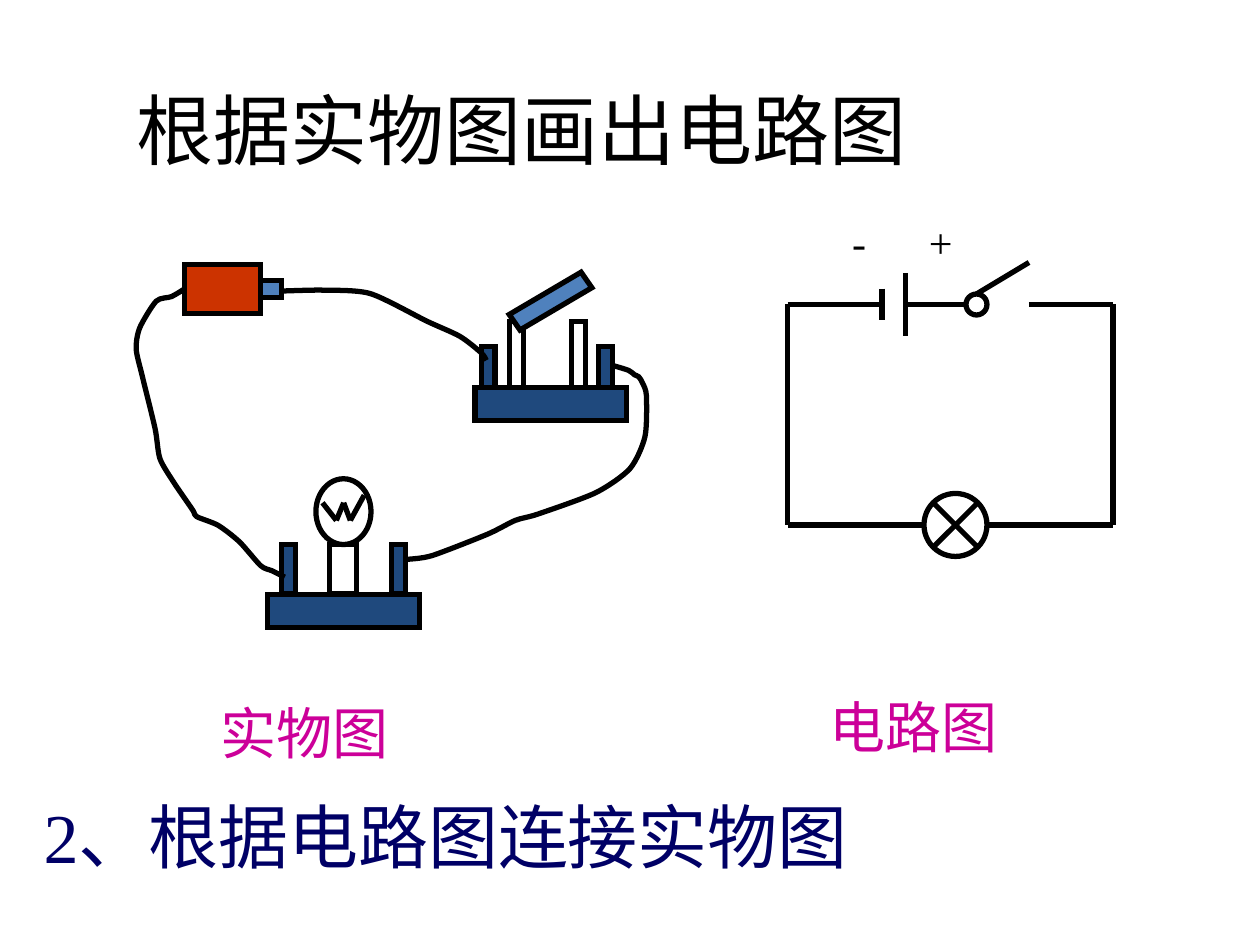
"""Build a slide that pairs a pictured circuit with its circuit diagram."""
from lxml.etree import SubElement
from pptx import Presentation
from pptx.dml.color import RGBColor
from pptx.enum.shapes import MSO_CONNECTOR as Link, MSO_SHAPE as Form
from pptx.enum.text import MSO_AUTO_SIZE as Fit, PP_ALIGN as Align
from pptx.oxml.ns import qn
from pptx.util import Pt

BLACK = RGBColor(0x00, 0x00, 0x00)
WHITE = RGBColor(0xFF, 0xFF, 0xFF)
RED = RGBColor(0xCC, 0x33, 0x00)
BLUE = RGBColor(0x4F, 0x81, 0xBD)
NAVY = RGBColor(0x1F, 0x49, 0x7D)
MAGENTA = RGBColor(0xCC, 0x00, 0x99)
INDIGO = RGBColor(0x00, 0x00, 0x66)

deck = Presentation()
deck.slide_width, deck.slide_height = Pt(720), Pt(540)
page = deck.slides.add_slide(deck.slide_layouts[6])


def add_part(form, fill, left, top, width, height):
    part = page.shapes.add_shape(form, Pt(left), Pt(top), Pt(width), Pt(height))
    part.shadow.inherit = False
    part.fill.solid()
    part.fill.fore_color.rgb = fill
    part.line.color.rgb = BLACK
    part.line.width = Pt(3)
    SubElement(part.line._get_or_add_ln(), qn("a:miter"), lim="800000")
    return part


def add_lines(ends):
    for x1, y1, x2, y2 in ends:
        line = page.shapes.add_connector(Link.STRAIGHT, Pt(x1), Pt(y1), Pt(x2), Pt(y2))
        line.line.color.rgb = BLACK
        line.line.width = Pt(3)
        SubElement(line._element.spPr, qn("a:effectLst"))


parts = [
    (Form.RECTANGLE, RED, 105.4, 151, 43.5, 28),
    (Form.RECTANGLE, BLUE, 149, 160.5, 11.7, 9.4),
    (Form.RECTANGLE, NAVY, 271.4, 221.5, 86.8, 18.7),
    (Form.RECTANGLE, WHITE, 291.2, 183.6, 7.9, 37.9),
    (Form.RECTANGLE, WHITE, 326.6, 183.6, 7.9, 37.9),
    (Form.RECTANGLE, NAVY, 275, 198, 7.9, 23.5),
    (Form.RECTANGLE, NAVY, 342, 198, 7.9, 23.5),
    (Form.RECTANGLE, NAVY, 152.9, 339.5, 86.7, 18.9),
    (Form.RECTANGLE, NAVY, 160.9, 311.2, 7.9, 28.3),
    (Form.RECTANGLE, NAVY, 223.9, 311.2, 7.9, 28.3),
    (Form.RECTANGLE, WHITE, 188.4, 311.2, 15.6, 28.3),
    (Form.OVAL, WHITE, 180.5, 273.6, 31.5, 37.6),
]
for part_values in parts:
    add_part(*part_values)

blade = add_part(Form.PARALLELOGRAM, BLUE, 307.4, 148.3, 14.4, 47.5)
blade.adjustments[0] = 0.25
blade.rotation = 235.2

filament = [(184.3, 287.3), (192.2, 297.4), (196.4, 287.3), (200.2, 297.4), (208.1, 283)]
add_lines([(*begin, *end) for begin, end in zip(filament, filament[1:])])

switch_to_lamp = [
    (349.9, 208.8), (359.3, 211.7), (362.6, 214.2), (365, 215.3), (367.2, 218.9),
    (369.4, 226.1), (368.6, 249.5), (360, 267.8), (340.6, 281.5), (307.4, 293.8),
    (294.5, 297.4), (278.6, 305.3), (247, 317.5), (232.6, 319.7)]
battery_to_lamp = [
    (105.8, 164.9), (98, 169.5), (89.3, 172.1), (79.9, 187.2), (77.8, 199.4),
    (81.4, 215.3), (88.6, 244.8), (91.4, 262.1), (99.4, 275.8), (110.2, 291.6),
    (112.3, 295.2), (124.6, 300.2), (136.8, 309.6), (149, 323.3), (155.5, 326.2),
    (162.7, 329.8)]
battery_to_switch = [
    (161.3, 166.3), (185, 165.8), (211.7, 167.8), (244.1, 183.6), (262.8, 192.2),
    (275, 201.6), (277.9, 205.9)]
for points in (switch_to_lamp, battery_to_lamp, battery_to_switch):
    nodes = [(Pt(x), Pt(y)) for x, y in points]
    builder = page.shapes.build_freeform(*nodes[0])
    builder.add_line_segments(nodes[1:], close=False)
    wire = builder.convert_to_shape()
    wire.shadow.inherit = False
    wire.fill.background()
    wire.line.color.rgb = BLACK
    wire.line.width = Pt(3)
    outline = wire._element.find(".//" + qn("a:path"))
    local = [(int(node.get("x")), int(node.get("y"))) for node in outline.iter(qn("a:pt"))]
    padded = [local[0], *local, local[-1]]
    for segment in outline.findall(qn("a:lnTo")):
        outline.remove(segment)
    for before, begin, end, after in zip(padded, padded[1:], padded[2:], padded[3:]):
        leave = [b + (e - p) / 8 for p, b, e in zip(before, begin, end)]
        arrive = [e - (a - b) / 8 for b, e, a in zip(begin, end, after)]
        curve = SubElement(outline, qn("a:cubicBezTo"))
        for x, y in (leave, arrive, end):
            SubElement(curve, qn("a:pt"), x=str(round(x)), y=str(round(y)))

LEFT, RIGHT, TOP, BOTTOM = 450, 636, 174, 300
add_part(Form.OVAL, WHITE, 552, 168, 12, 12)
add_part(Form.OVAL, WHITE, 528, 282, 36, 36)
add_lines([
    (504, 165, 504, 183),
    (517.5, 156, 517.5, 192),
    (LEFT, TOP, 504, TOP),
    (517.5, TOP, 552, TOP),
    (558, 168, 588, 150),
    (588, TOP, RIGHT, TOP),
    (LEFT, TOP, LEFT, BOTTOM),
    (RIGHT, TOP, RIGHT, BOTTOM),
    (558, 288, 534, 312),
    (534, 288, 558, 312),
    (LEFT, BOTTOM, 528, BOTTOM),
    (564, BOTTOM, RIGHT, BOTTOM),
])

labels = [
    ("根据实物图画出电路图", 71, 43.4, 493, 60, 44, BLACK, Align.LEFT),
    ("-", 476, 120, 30, 36, 24, BLACK, Align.CENTER),
    ("+", 522.6, 120, 30, 36, 24, BLACK, Align.CENTER),
    ("实物图", 118.8, 395.6, 115, 45.4, 32, MAGENTA, Align.LEFT),
    ("电路图", 467, 392.4, 127.4, 45.4, 32, MAGENTA, Align.LEFT),
    ("2、根据电路图连接实物图", 17.8, 450, 690, 55.4, 40, INDIGO, Align.LEFT),
]
for text, left, top, width, height, size, colour, align in labels:
    box = page.shapes.add_textbox(Pt(left), Pt(top), Pt(width), Pt(height))
    box.text_frame.word_wrap = True
    box.text_frame.auto_size = Fit.SHAPE_TO_FIT_TEXT
    para = box.text_frame.paragraphs[0]
    para.alignment = align
    span = para.add_run()
    span.text = text
    for attribute, value in {"name": "Times New Roman", "size": Pt(size)}.items():
        setattr(span.font, attribute, value)
    span.font.color.rgb = colour

deck.save("out.pptx")
